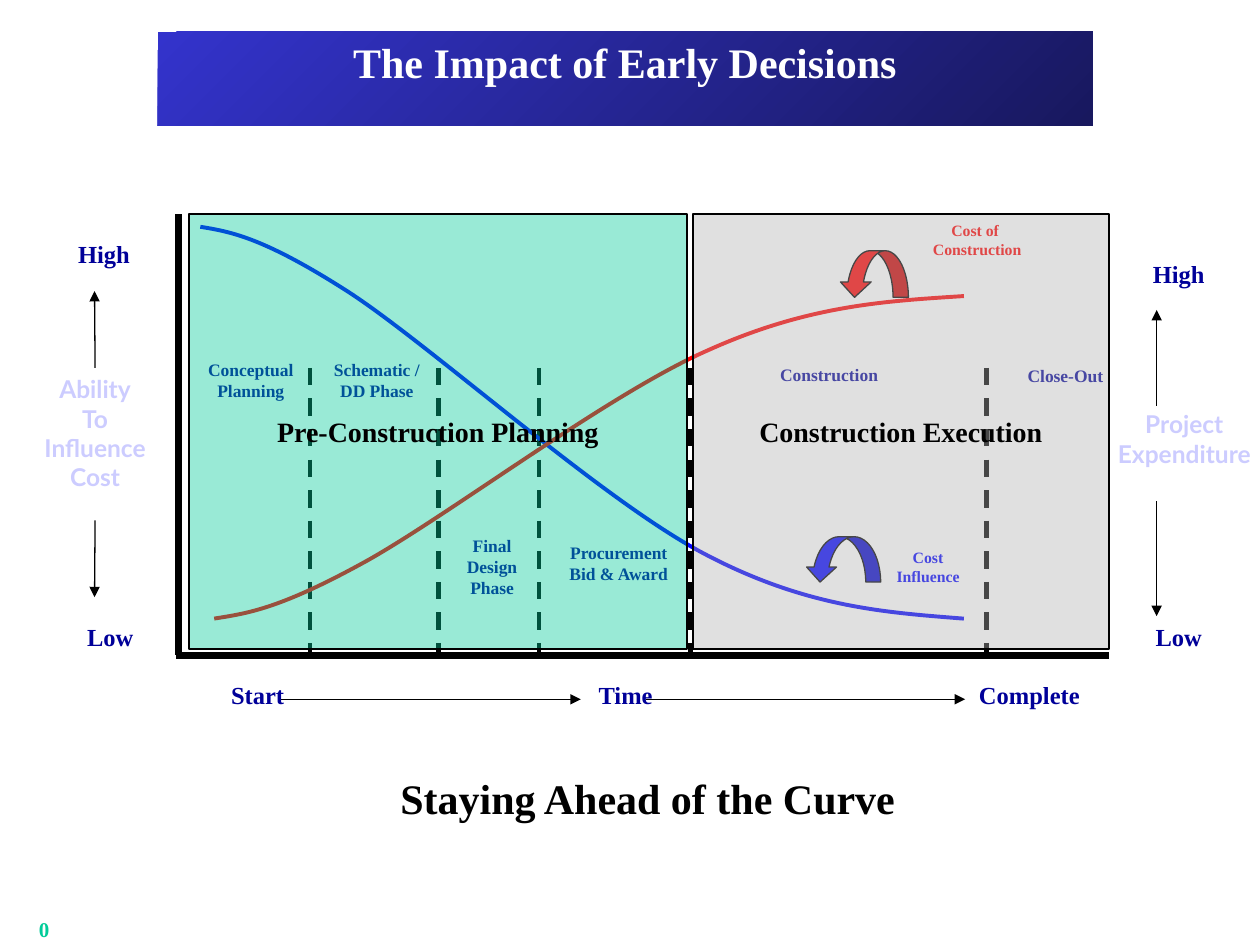
"""Build the slide on the impact of early decisions over a project's life."""
from dataclasses import dataclass

from lxml.etree import SubElement
from pptx import Presentation
from pptx.dml.color import RGBColor
from pptx.enum.dml import MSO_LINE
from pptx.enum.shapes import MSO_CONNECTOR, MSO_SHAPE
from pptx.enum.text import MSO_ANCHOR, PP_ALIGN
from pptx.oxml.ns import qn
from pptx.util import Emu, Pt

EMU_PER_PX = 9144
SERIF = "Times New Roman"
SANS = "Lato"
COLORS = {
    "black": "000000", "white": "FFFFFF", "navy": "000099", "lavender": "CCCCFF",
    "green": "00CC99", "grey": "B2B2B2", "blue": "0000FF", "red": "FF0000",
    "title_start": "3333CC", "title_end": "18185E",
}


@dataclass(frozen=True)
class Box:
    left: int
    top: int
    width: int
    height: int


@dataclass(frozen=True)
class Label:
    text: str
    box: Box
    size: int = 14
    color: str = "navy"
    font: str = SERIF


@dataclass(frozen=True)
class Line:
    start: tuple
    end: tuple
    width: float = 0.75
    dashed: bool = False
    arrow: bool = False


@dataclass(frozen=True)
class Curve:
    points: tuple
    color: str
    arrow_box: Box
    label: Label
    grouped: bool = False


@dataclass(frozen=True)
class Period:
    text: str
    box: Box
    color: str


LABELS = (
    Label("High", Box(43, 185, 79, 61)),
    Label("Low", Box(48, 489, 79, 61)),
    Label("High", Box(896, 201, 79, 61)),
    Label("Low", Box(896, 489, 79, 46)),
    Label("Start", Box(165, 535, 79, 61)),
    Label("Time", Box(457, 535, 79, 61)),
    Label("Complete", Box(761, 535, 112, 45)),
    Label("Conceptual Planning", Box(147, 280, 104, 61), 10),
    Label("Schematic / DD Phase", Box(250, 280, 98, 61), 10),
    Label("Final Design\nPhase", Box(356, 420, 69, 60), 10),
    Label("Procurement\nBid & Award", Box(435, 425, 112, 45), 10),
    Label("Construction", Box(603, 284, 110, 46), 10),
    Label("Close-Out", Box(795, 285, 101, 45), 10),
    Label("Project\nExpenditure", Box(870, 320, 140, 65), 14, "lavender", SANS),
    Label("Staying Ahead of the Curve", Box(233, 608, 562, 50), 24, "black"),
)
ABILITY = Label("Ability\nTo\nInfluence\nCost", Box(2, 292, 147, 121), 14, "lavender", SANS)
PAGE_NUMBER = Label("0", Box(0, 725, 70, 25), 12, "green")

AXES = (Line((142, 170), (142, 520), 4), Line((140, 520), (880, 520), 4))
PHASE_LINES = tuple(
    Line((x, 292), (x, 520), 2.5, dashed=True) for x in (246, 348, 428, 548, 783)
)
ARROWS = (
    Line((221, 555), (461, 555), arrow=True),
    Line((513, 555), (766, 555), arrow=True),
    Line((918, 398), (918, 489), arrow=True),
    Line((918, 322), (918, 246), arrow=True),
)
ABILITY_ARROWS = (
    (2, Line((75, 413), (75, 474), arrow=True)),
    (0, Line((75, 292), (75, 231), arrow=True)),
)
CURVED_ARROW_ADJUSTMENTS = (0.33, 0.66, 0.33)
CURVES = (
    Curve(
        ((159, 180), (184, 184), (210, 189), (277, 232), (343, 275),
         (477, 396), (558, 439), (639, 482), (702, 486), (765, 491)),
        "blue", Box(639, 426, 60, 36),
        Label("Cost Influence", Box(694, 430, 85, 65), 9, "blue"),
    ),
    Curve(
        ((170, 491), (195, 487), (220, 484), (286, 448), (351, 413),
         (482, 313), (562, 278), (642, 242), (704, 239), (765, 235)),
        "red", Box(666, 199, 55, 37),
        Label("Cost of \nConstruction", Box(722, 170, 107, 67), 9, "red"),
        grouped=True,
    ),
)
PERIODS = (
    Period("Pre-Construction Planning", Box(150, 170, 395, 345), "green"),
    Period("Construction Execution", Box(550, 170, 330, 345), "grey"),
)


def px(value: int) -> Emu:
    """Turn px into EMU."""
    return Emu(value * EMU_PER_PX)


def rgb(name: str) -> RGBColor:
    """Look up a named colour."""
    return RGBColor.from_string(COLORS[name])


def bounds(box: Box) -> tuple:
    """Give a box's left, top, width and height in EMU."""
    return px(box.left), px(box.top), px(box.width), px(box.height)


def write_text(shape, text: str, *, size: int, color: str, font: str = SERIF,
               anchor=MSO_ANCHOR.TOP, wrap: bool = True) -> None:
    """Write bold centred text, one paragraph for each line."""
    frame = shape.text_frame
    frame.text = text
    frame.word_wrap = wrap
    frame.vertical_anchor = anchor
    for paragraph in frame.paragraphs:
        paragraph.alignment = PP_ALIGN.CENTER
        for run in paragraph.runs:
            run.font.name = font
            run.font.size = Pt(size)
            run.font.bold = True
            run.font.color.rgb = rgb(color)


def add_label(container, label: Label, **text_format):
    """Add a text box for a label."""
    shape = container.shapes.add_textbox(*bounds(label.box))
    write_text(shape, label.text, size=label.size, color=label.color,
               font=label.font, **text_format)
    return shape


def add_line(slide, line: Line):
    """Add a straight line, dashed or with an arrowhead if asked."""
    connector = slide.shapes.add_connector(
        MSO_CONNECTOR.STRAIGHT, *map(px, line.start + line.end))
    connector.line.color.rgb = rgb("black")
    connector.line.width = Pt(line.width)
    if line.dashed:
        connector.line.dash_style = MSO_LINE.DASH
    properties = connector._element.spPr
    if line.arrow:
        SubElement(properties.find(qn("a:ln")), qn("a:tailEnd"), type="triangle")
    SubElement(properties, qn("a:effectLst"))
    return connector


def add_filled_shape(container, kind, box: Box, color: str, line_width: float):
    """Add a preset shape with a plain fill and a black outline."""
    shape = container.shapes.add_shape(kind, *bounds(box))
    shape.shadow.inherit = False
    shape.fill.solid()
    shape.fill.fore_color.rgb = rgb(color)
    shape.line.color.rgb = rgb("black")
    shape.line.width = Pt(line_width)
    return shape


def round_segments(shape) -> None:
    """Join each three straight segments into one cubic curve."""
    outline = next(shape._element.iter(qn("a:moveTo"))).getparent()
    segments = outline.findall(qn("a:lnTo"))
    for first in range(0, len(segments), 3):
        cubic = SubElement(outline, qn("a:cubicBezTo"))
        for segment in segments[first:first + 3]:
            cubic.append(segment[0])
            outline.remove(segment)


def add_curve(slide, curve: Curve) -> None:
    """Add a cost curve with its label and curved arrow."""
    container = slide.shapes.add_group_shape() if curve.grouped else slide
    start, *rest = [tuple(map(px, point)) for point in curve.points]
    builder = container.shapes.build_freeform(*start)
    builder.add_line_segments(rest, close=False)
    shape = builder.convert_to_shape()
    round_segments(shape)
    shape.shadow.inherit = False
    shape.fill.background()
    shape.line.color.rgb = rgb(curve.color)
    shape.line.width = Pt(2.25)
    add_label(container, curve.label)
    arrow = add_filled_shape(
        container, MSO_SHAPE.CURVED_DOWN_ARROW, curve.arrow_box, curve.color, 0.75)
    arrow._element.spPr.find(qn("a:xfrm")).set("flipH", "1")
    for index, value in enumerate(CURVED_ARROW_ADJUSTMENTS):
        arrow.adjustments[index] = value


def add_period(slide, period: Period) -> None:
    """Add a translucent panel for a project period."""
    shape = add_filled_shape(slide, MSO_SHAPE.RECTANGLE, period.box, period.color, 1.25)
    SubElement(shape._element.spPr.find(qn("a:solidFill"))[0], qn("a:alpha"), val="40000")
    write_text(shape, period.text, size=16, color="black",
               anchor=MSO_ANCHOR.MIDDLE, wrap=False)


def format_title(title) -> None:
    """Place the title and give it its gradient."""
    title.left, title.top, title.width, title.height = bounds(Box(125, 25, 742, 75))
    title.fill.gradient()
    title.fill.gradient_angle = 315
    for stop, color in zip(title.fill.gradient_stops, ("title_start", "title_end")):
        stop.color.rgb = rgb(color)
    write_text(title, "The Impact of Early Decisions", size=24, color="white")
    title.text_frame.margin_top = px(4)


def main() -> None:
    """Build and save the presentation."""
    presentation = Presentation()
    presentation.slide_width, presentation.slide_height = px(1000), px(750)
    slide = presentation.slides.add_slide(presentation.slide_layouts[5])
    format_title(slide.shapes.title)
    page_number = add_label(slide, PAGE_NUMBER, anchor=MSO_ANCHOR.MIDDLE, wrap=False)
    frame = page_number.text_frame
    frame.margin_left = frame.margin_top = frame.margin_right = frame.margin_bottom = 0
    for line in AXES + PHASE_LINES + ARROWS:
        add_line(slide, line)
    for label in LABELS:
        add_label(slide, label)
    ability = add_label(slide, ABILITY)
    for site, line in ABILITY_ARROWS:
        add_line(slide, line).begin_connect(ability, site)
    for curve in CURVES:
        add_curve(slide, curve)
    for period in PERIODS:
        add_period(slide, period)
    presentation.save("out.pptx")


if __name__ == "__main__":
    main()
